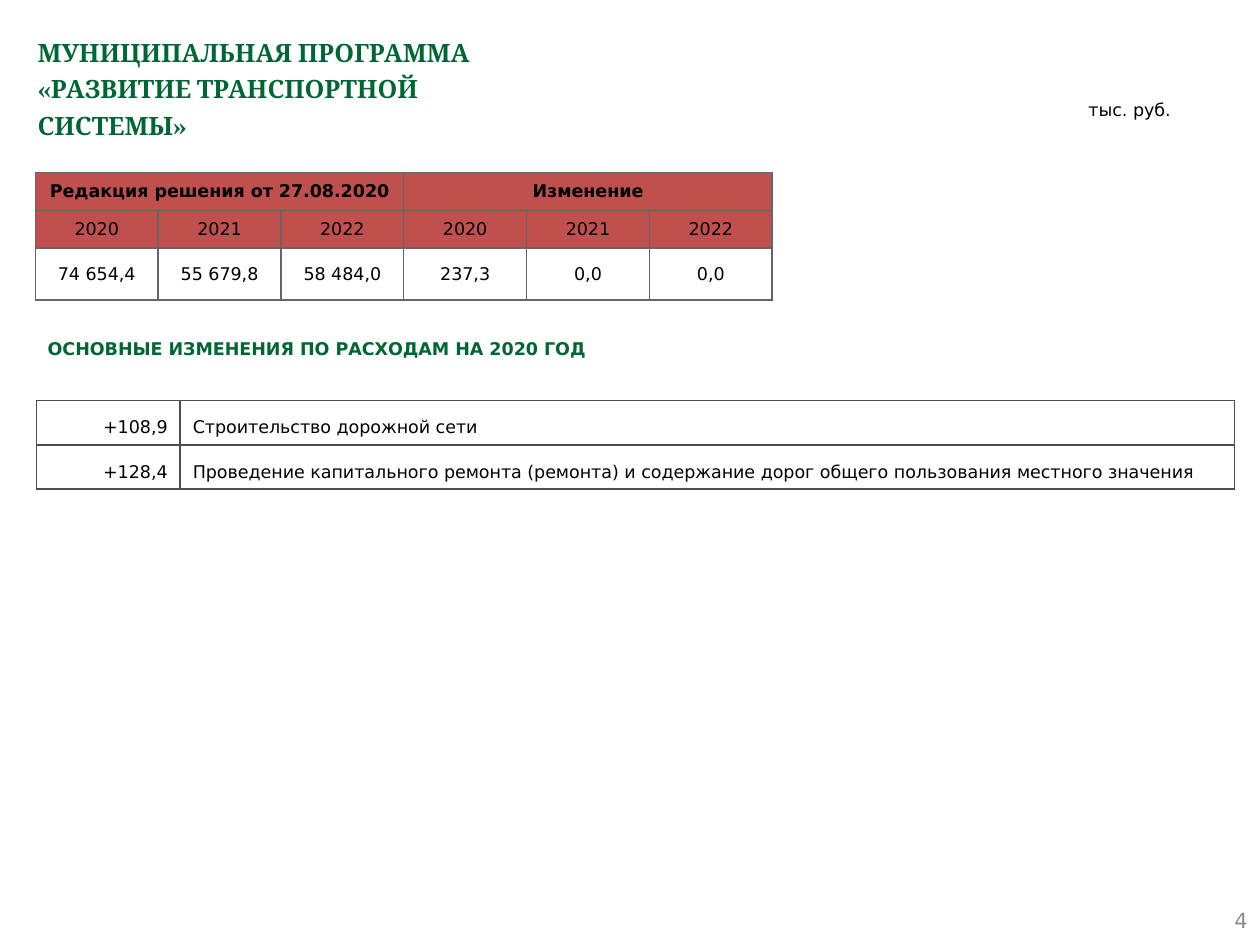
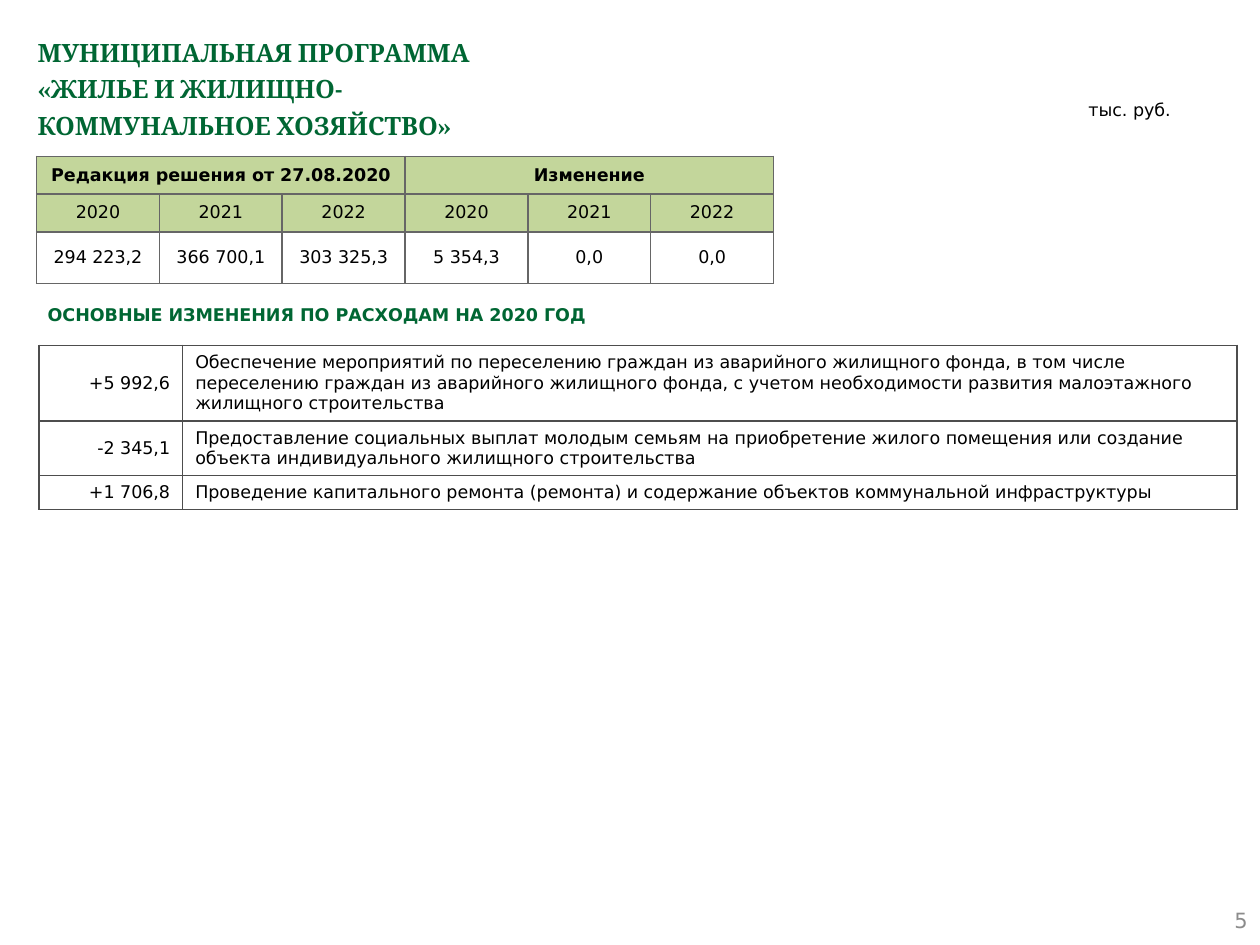
"""Build two budget slides on municipal programmes: totals and main changes."""
import pptx
import pptx.dml.color
import pptx.enum.shapes
import pptx.enum.text
import pptx.oxml
import pptx.oxml.ns
import pptx.util

Inches = pptx.util.Inches
RGBColor = pptx.dml.color.RGBColor
ALIGN = pptx.enum.text.PP_ALIGN
ANCHOR = pptx.enum.text.MSO_ANCHOR

GREEN = RGBColor(0x00, 0x66, 0x33)
BLACK = RGBColor(0x00, 0x00, 0x00)
PAGE_GREY = RGBColor(0x8C, 0x8C, 0x8C)
TOTALS_LINE = RGBColor(0x66, 0x66, 0x66)
CHANGES_LINE = RGBColor(0x4D, 0x4D, 0x4D)
RED = RGBColor(0xC0, 0x50, 0x4D)
LIGHT_GREEN = RGBColor(0xC3, 0xD6, 0x9B)

YEARS = ["2020", "2021", "2022"]
SLIDES = [
    dict(
        title="МУНИЦИПАЛЬНАЯ ПРОГРАММА\v«РАЗВИТИЕ ТРАНСПОРТНОЙ\vСИСТЕМЫ»",
        page="4", header_fill=RED, totals_at=(0.28, 1.37), heading_top=2.55,
        totals=["74 654,4", "55 679,8", "58 484,0", "237,3", "0,0", "0,0"],
        changes_at=(0.29, 3.18), heights=[0.34, 0.34], spacing=1.5,
        changes=[
            ["+108,9", "Строительство дорожной сети"],
            ["+128,4", "Проведение капитального ремонта (ремонта) и содержание "
                       "дорог общего пользования местного значения"],
        ],
    ),
    dict(
        title="МУНИЦИПАЛЬНАЯ ПРОГРАММА\v«ЖИЛЬЕ И ЖИЛИЩНО-\vКОММУНАЛЬНОЕ ХОЗЯЙСТВО»",
        page="5", header_fill=LIGHT_GREEN, totals_at=(0.29, 1.24), heading_top=2.28,
        totals=["294 223,2", "366 700,1", "303 325,3", "5 354,3", "0,0", "0,0"],
        changes_at=(0.31, 2.74), heights=[0.59, 0.42, 0.27], spacing=1.0,
        changes=[
            ["+5 992,6", "Обеспечение мероприятий по переселению граждан из аварийного "
                         "жилищного фонда, в том числе переселению граждан из аварийного "
                         "жилищного фонда, с учетом необходимости развития малоэтажного "
                         "жилищного строительства"],
            ["-2 345,1", "Предоставление социальных выплат молодым семьям на приобретение "
                         "жилого помещения или создание объекта индивидуального "
                         "жилищного строительства"],
            ["+1 706,8", "Проведение капитального ремонта (ремонта) и содержание "
                         "объектов коммунальной инфраструктуры"],
        ],
    ),
]


def write(tf, text, size=10, font="DejaVu Sans", color=BLACK, bold=False,
          align=ALIGN.LEFT, spacing=1.0, anchor=ANCHOR.TOP):
    tf.word_wrap = True
    tf.vertical_anchor = anchor
    p = tf.paragraphs[0]
    p.text = text
    p.alignment = align
    p.line_spacing = spacing
    for r in p.runs:
        r.font.size = pptx.util.Pt(size)
        r.font.name = font
        r.font.bold = bold
        r.font.color.rgb = color


def add_grid(s, at, widths, heights, line):
    left, top = at
    tbl = s.shapes.add_table(len(heights), len(widths), Inches(left), Inches(top),
                             Inches(sum(widths)), Inches(sum(heights))).table
    tbl.first_row = tbl.horz_banding = False
    for col, width in zip(tbl.columns, widths):
        col.width = Inches(width)
    for row, height in zip(tbl.rows, heights):
        row.height = Inches(height)
    for cell in tbl.iter_cells():
        tcPr = cell._tc.get_or_add_tcPr()
        for side in ("lnL", "lnR", "lnT", "lnB"):
            tcPr.append(pptx.oxml.parse_xml(
                f'<a:{side} {pptx.oxml.ns.nsdecls("a")} w="12700"><a:solidFill>'
                f'<a:srgbClr val="{line}"/></a:solidFill></a:{side}>'))
        cell.fill.background()
    return tbl


prs = pptx.Presentation()
prs.slide_width = Inches(10)
prs.slide_height = Inches(7.5)

for data in SLIDES:
    s = prs.slides.add_slide(prs.slide_layouts[6])

    title = s.shapes.add_textbox(Inches(0.2), Inches(0.2), Inches(9.61), Inches(0.79))
    write(title.text_frame, data["title"], size=14.4, font="Cambria", color=GREEN,
          bold=True, spacing=1.2)

    page = s.shapes.add_textbox(Inches(7.67), Inches(7.1), Inches(2.33), Inches(0.4))
    write(page.text_frame, data["page"], size=12, color=PAGE_GREY,
          align=ALIGN.RIGHT, anchor=ANCHOR.MIDDLE)

    heading = s.shapes.add_shape(pptx.enum.shapes.MSO_SHAPE.PENTAGON, Inches(0.28),
                                 Inches(data["heading_top"]), Inches(5.32), Inches(0.43))
    heading.adjustments[0] = 0
    heading.shadow.inherit = False
    heading.fill.background()
    heading.line.fill.background()
    write(heading.text_frame, "ОСНОВНЫЕ ИЗМЕНЕНИЯ ПО РАСХОДАМ НА 2020 ГОД",
          color=GREEN, bold=True, anchor=ANCHOR.MIDDLE)

    changes = add_grid(s, data["changes_at"], [1.14, 8.37], data["heights"], CHANGES_LINE)
    for i, row in enumerate(data["changes"]):
        for j, text in enumerate(row):
            cell = changes.cell(i, j)
            cell.vertical_anchor = ANCHOR.MIDDLE
            write(cell.text_frame, text, align=(ALIGN.RIGHT, ALIGN.LEFT)[j],
                  spacing=data["spacing"], anchor=ANCHOR.MIDDLE)

    unit = s.shapes.add_textbox(Inches(8.54), Inches(0.7), Inches(1.01), Inches(0.3))
    write(unit.text_frame, "тыс. руб.", spacing=1.2)

    totals = add_grid(s, data["totals_at"], [5.85 / 6] * 6, [0.3, 0.3, 0.41], TOTALS_LINE)
    groups = ["Редакция решения от 27.08.2020", "", "", "Изменение", "", ""]
    for i, row in enumerate([groups, YEARS * 2, data["totals"]]):
        for j, text in enumerate(row):
            cell = totals.cell(i, j)
            cell.vertical_anchor = ANCHOR.MIDDLE
            cell.margin_left = cell.margin_right = Inches(0.05)
            cell.margin_top = cell.margin_bottom = Inches(0.05)
            if i < 2:
                cell.fill.solid()
                cell.fill.fore_color.rgb = data["header_fill"]
            write(cell.text_frame, text, bold=i == 0, align=ALIGN.CENTER,
                  anchor=ANCHOR.MIDDLE)
    for j in (0, 3):
        totals.cell(0, j).merge(totals.cell(0, j + 2))

prs.save("out.pptx")
